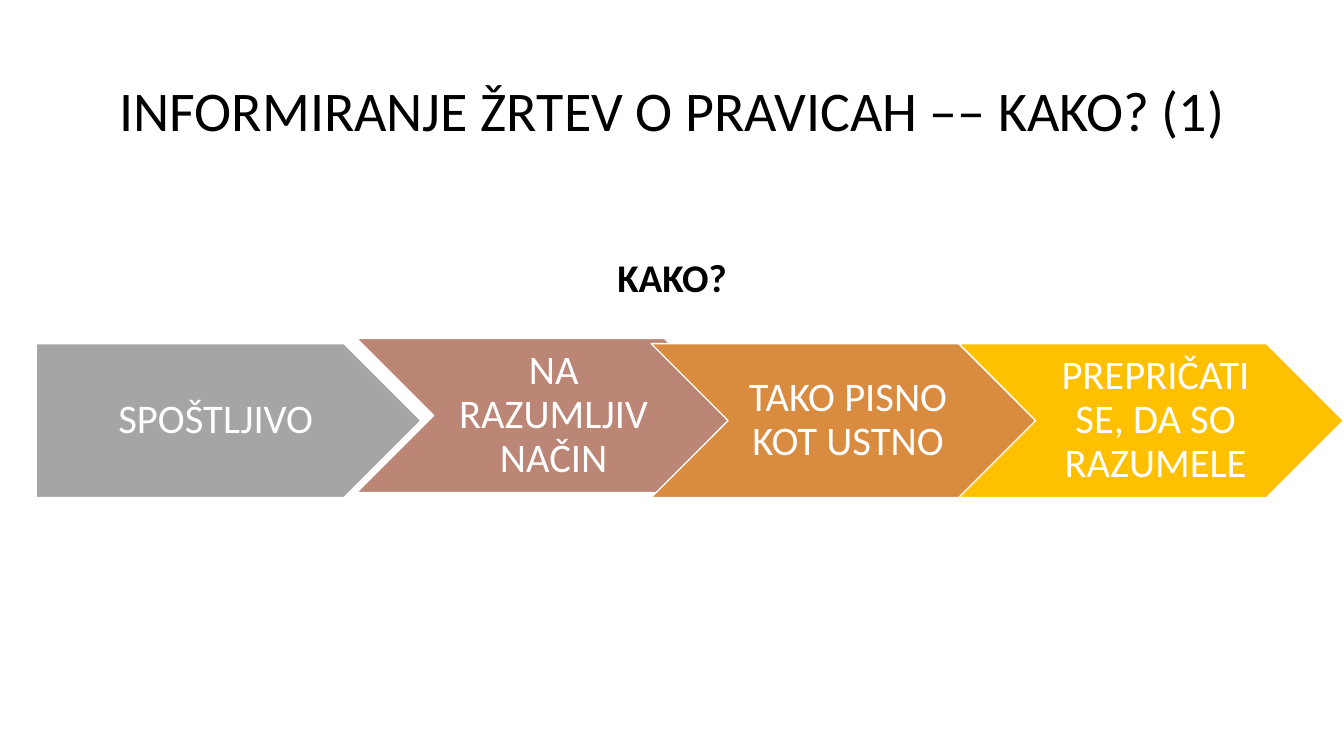
from pptx import Presentation
from pptx import util as u
from pptx.dml import color
from pptx.enum import shapes, text


def rgb(value):
    return color.RGBColor.from_string(value)


def write(box, words, size, tint, bold=False):
    frame = box.text_frame
    frame.text = words
    frame.word_wrap = True
    frame.auto_size = text.MSO_AUTO_SIZE.NONE
    frame.vertical_anchor = text.MSO_ANCHOR.MIDDLE
    para = frame.paragraphs[0]
    para.alignment = text.PP_ALIGN.CENTER
    para.line_spacing = 0.9
    for span in para.runs:
        span.font.name = "Calibri"
        span.font.size = u.Pt(size)
        span.font.bold = bold
        span.font.color.rgb = rgb(tint)


deck = Presentation()
deck.slide_width = u.Cm(33.87)
deck.slide_height = u.Cm(19.05)
page = deck.slides.add_slide(deck.slide_layouts[5])

title = page.shapes.title
title.left, title.top = u.Cm(2.33), u.Cm(1.01)
title.width, title.height = u.Cm(29.21), u.Cm(3.68)
write(title, "INFORMIRANJE ŽRTEV O PRAVICAH –– KAKO? (1)", 40, "000000")

question = page.shapes.add_textbox(u.Cm(2.33), u.Cm(6.3), u.Cm(29.21), u.Cm(1.5))
write(question, "KAKO?", 28, "000000", bold=True)

pentagon = shapes.MSO_SHAPE.PENTAGON
chevron = shapes.MSO_SHAPE.CHEVRON
steps = [
    (pentagon, 0.91, 8.66, "A5A5A5", "SPOŠTLJIVO"),
    (chevron, 8.99, 8.53, "BB8676", "NA RAZUMLJIV NAČIN"),
    (chevron, 16.41, 8.66, "D98B3F", "TAKO PISNO KOT USTNO"),
    (chevron, 24.16, 8.66, "FFC000", "PREPRIČATI SE, DA SO RAZUMELE"),
]
for kind, left, top, fill, words in steps:
    arrow = page.shapes.add_shape(kind, u.Cm(left), u.Cm(top), u.Cm(9.7), u.Cm(3.88))
    arrow.shadow.inherit = False
    arrow.fill.solid()
    arrow.fill.fore_color.rgb = rgb(fill)
    arrow.line.color.rgb = rgb("FFFFFF")
    arrow.line.width = u.Pt(1)
    write(arrow, words, 29, "FFFFFF")
    frame = arrow.text_frame
    frame.margin_left = u.Cm(0.43 if kind == pentagon else 0.33)
    frame.margin_right = u.Cm(0.1)
    frame.margin_top = frame.margin_bottom = u.Cm(0.2)

deck.save("out.pptx")
